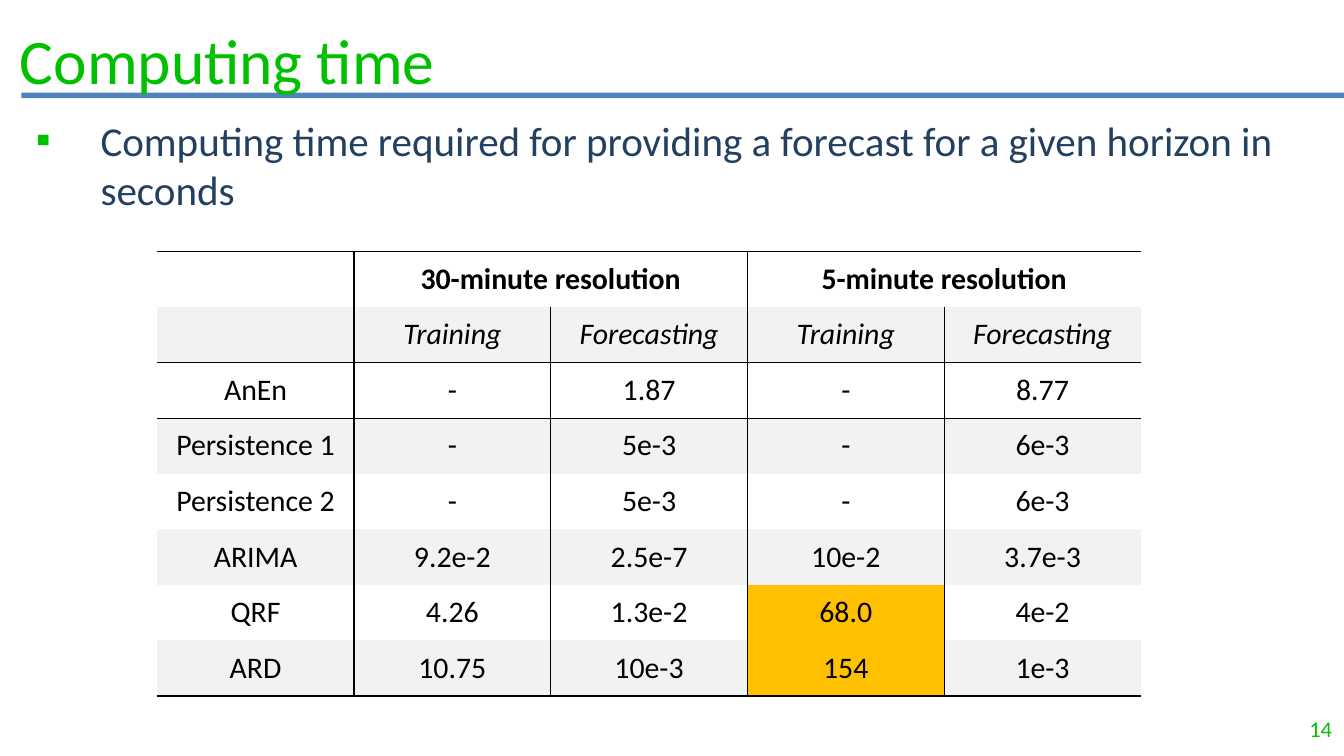
import pptx
import pptx.dml.color
import pptx.enum.shapes
import pptx.enum.text
import pptx.oxml
import pptx.oxml.ns
import pptx.util
from lxml import etree
from pptx.util import Inches

ALIGN = pptx.enum.text.PP_ALIGN
ANCHOR = pptx.enum.text.MSO_ANCHOR

SLIDE_WIDTH = 10
SLIDE_HEIGHT = SLIDE_WIDTH * 9 / 16

GREEN, BLUE, NAVY = "00C000", "4F81BD", "244061"
BLACK, BAND, HIGHLIGHT = "000000", "F2F2F2", "FFC000"
THICK, THIN = 1, 0.5

ROWS = [
    ["", "30-minute resolution", "", "5-minute resolution", ""],
    ["", "Training", "Forecasting", "Training", "Forecasting"],
    ["AnEn", "-", "1.87", "-", "8.77"],
    ["Persistence 1", "-", "5e-3", "-", "6e-3"],
    ["Persistence 2", "-", "5e-3", "-", "6e-3"],
    ["ARIMA", "9.2e-2", "2.5e-7", "10e-2", "3.7e-3"],
    ["QRF", "4.26", "1.3e-2", "68.0", "4e-2"],
    ["ARD", "10.75", "10e-3", "154", "1e-3"],
]
MERGED_COLUMNS = (1, 3)
HIGHLIGHTED = {(6, 3), (7, 3)}
ROW_LINES = {0: THICK, 2: THICK, 3: THIN, 8: THICK}
COLUMN_LINES = {1: THICK, 2: THIN, 3: THICK, 4: THIN}


def color(value):
    return pptx.dml.color.RGBColor.from_string(value)


def vertical_line(row, edge):
    """Width of a column line, which is absent inside the merged headings."""
    if row == 0 and edge - 1 in MERGED_COLUMNS:
        return 0
    return COLUMN_LINES.get(edge, 0)


class SlideBuilder:
    font_name = "Calibri"

    def __init__(self, slide):
        self.slide = slide

    def style(self, paragraph, size, value, bold=False, italic=False):
        font = paragraph.font
        font.name, font.size = self.font_name, pptx.util.Pt(size)
        font.bold, font.italic = bold, italic
        font.color.rgb = color(value)

    def bar(self, left, top, width, height, value):
        shape = self.slide.shapes.add_shape(
            pptx.enum.shapes.MSO_SHAPE.RECTANGLE,
            Inches(left), Inches(top), Inches(width), Inches(height))
        shape.shadow.inherit = False
        shape.fill.solid()
        shape.fill.fore_color.rgb = color(value)
        shape.line.fill.background()

    def text(self, left, top, width, height, words, size, value,
             anchor=ANCHOR.MIDDLE, align=ALIGN.LEFT, bullet=None):
        box = self.slide.shapes.add_textbox(
            Inches(left), Inches(top), Inches(width), Inches(height))
        frame = box.text_frame
        frame.word_wrap = True
        frame.vertical_anchor = anchor
        paragraph = frame.paragraphs[0]
        paragraph.text = words
        paragraph.alignment = align
        if bullet:
            self.add_bullet(paragraph, bullet, GREEN)
        self.style(paragraph, size, value)

    def add_bullet(self, paragraph, character, value):
        properties = paragraph._p.get_or_add_pPr()
        properties.set("marL", str(Inches(0.5)))
        properties.set("indent", str(Inches(-0.48)))
        namespace = pptx.oxml.ns.nsdecls("a")
        for xml in (
            f'<a:buClr {namespace}><a:srgbClr val="{value}"/></a:buClr>',
            f'<a:buFont {namespace} typeface="{self.font_name}"/>',
            f'<a:buChar {namespace} char="{character}"/>',
        ):
            properties.append(pptx.oxml.parse_xml(xml))

    def cell_border(self, cell, side, width):
        qn = pptx.oxml.ns.qn
        line = etree.SubElement(cell._tc.get_or_add_tcPr(), qn(f"a:ln{side}"))
        if not width:
            etree.SubElement(line, qn("a:noFill"))
            return
        line.set("w", str(pptx.util.Pt(width)))
        fill = etree.SubElement(line, qn("a:solidFill"))
        etree.SubElement(fill, qn("a:srgbClr")).set("val", BLACK)

    def table(self, left, top, width, height, rows):
        table = self.slide.shapes.add_table(
            len(rows), len(rows[0]), Inches(left), Inches(top),
            Inches(width), Inches(height)).table
        table.first_row = table.horz_banding = False
        for column in MERGED_COLUMNS:
            table.cell(0, column).merge(table.cell(0, column + 1))
        for row, values in enumerate(rows):
            for column, words in enumerate(values):
                self.cell(table.cell(row, column), row, column, words)

    def cell(self, cell, row, column, words):
        cell.vertical_anchor = ANCHOR.MIDDLE
        cell.margin_left = cell.margin_right = Inches(0.08)
        cell.margin_top = cell.margin_bottom = Inches(0.04)
        self.cell_border(cell, "L", vertical_line(row, column))
        self.cell_border(cell, "R", vertical_line(row, column + 1))
        self.cell_border(cell, "T", ROW_LINES.get(row, 0))
        self.cell_border(cell, "B", ROW_LINES.get(row + 1, 0))
        if (row, column) in HIGHLIGHTED or row % 2:
            cell.fill.solid()
            cell.fill.fore_color.rgb = color(
                HIGHLIGHT if (row, column) in HIGHLIGHTED else BAND)
        else:
            cell.fill.background()
        paragraph = cell.text_frame.paragraphs[0]
        paragraph.text = words
        paragraph.alignment = ALIGN.CENTER
        self.style(paragraph, 16, BLACK, bold=row == 0, italic=row == 1)


def main():
    presentation = pptx.Presentation()
    presentation.slide_width = Inches(SLIDE_WIDTH)
    presentation.slide_height = Inches(SLIDE_HEIGHT)
    builder = SlideBuilder(
        presentation.slides.add_slide(presentation.slide_layouts[6]))

    builder.bar(0.16, 0.69, 9.84, 0.04, BLUE)
    builder.text(7.68, 5.27, 2.33, 0.3, "14", 12, GREEN, align=ALIGN.RIGHT)
    builder.text(0.05, -0.03, 9, 0.94, "Computing time", 34, GREEN)
    builder.text(
        0.15, 0.81, 9.64, 4.36,
        "Computing time required for providing a forecast "
        "for a given horizon in seconds",
        22, NAVY, anchor=ANCHOR.TOP, bullet="▪")
    builder.table(1.17, 1.87, 7.32, 3.31, ROWS)

    presentation.save("out.pptx")


if __name__ == "__main__":
    main()
